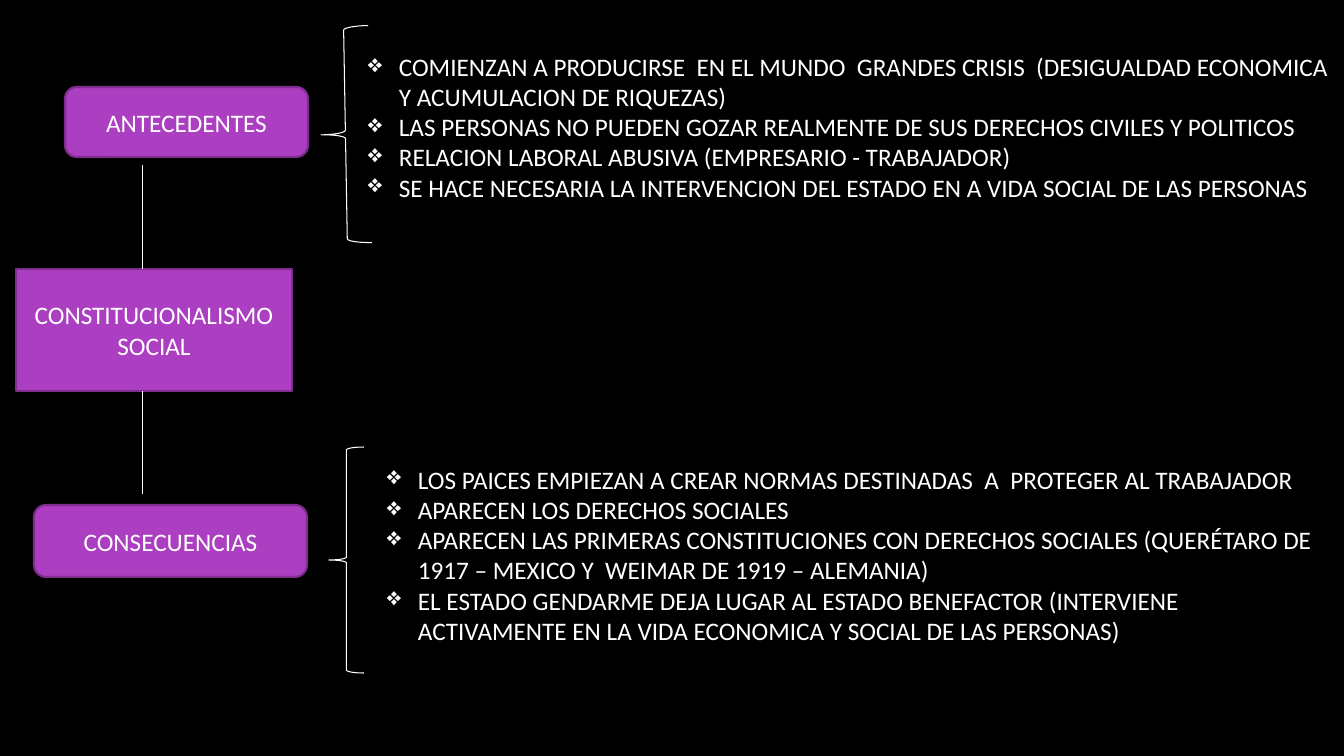
from dataclasses import dataclass

from lxml.etree import SubElement
from pptx import Presentation
from pptx.dml.color import RGBColor
from pptx.enum.shapes import MSO_CONNECTOR as Connector, MSO_SHAPE as Shape
from pptx.enum.text import MSO_ANCHOR as Anchor, PP_ALIGN as Align
from pptx.oxml.ns import qn
from pptx.util import Emu, Pt


@dataclass(frozen=True)
class Theme:
    """Colours, font and sizes of the deck."""
    background: RGBColor = RGBColor(0x00, 0x00, 0x00)
    ink: RGBColor = RGBColor(0xFF, 0xFF, 0xFF)
    node: RGBColor = RGBColor(0xAC, 0x3E, 0xC1)
    border: RGBColor = RGBColor(0x7F, 0x2E, 0x8F)
    font: str = "Calibri"
    size: Pt = Pt(18)
    thin: Pt = Pt(0.75)
    thick: Pt = Pt(1.5)


THEME = Theme()
PAGE = (1344, 756)
HANGING = 31

CAUSES = [
    "COMIENZAN A PRODUCIRSE  EN EL MUNDO  GRANDES CRISIS  (DESIGUALDAD ECONOMICA Y ACUMULACION DE RIQUEZAS)",
    "LAS PERSONAS NO PUEDEN GOZAR REALMENTE DE SUS DERECHOS CIVILES Y POLITICOS",
    "RELACION LABORAL ABUSIVA (EMPRESARIO - TRABAJADOR)",
    "SE HACE NECESARIA LA INTERVENCION DEL ESTADO EN A VIDA SOCIAL DE LAS PERSONAS",
]
EFFECTS = [
    "LOS PAICES EMPIEZAN A CREAR NORMAS DESTINADAS  A  PROTEGER AL TRABAJADOR",
    "APARECEN LOS DERECHOS SOCIALES",
    "APARECEN LAS PRIMERAS CONSTITUCIONES CON DERECHOS SOCIALES (QUERÉTARO DE 1917 – MEXICO Y  WEIMAR DE 1919 – ALEMANIA)",
    "EL ESTADO GENDARME DEJA LUGAR AL ESTADO BENEFACTOR (INTERVIENE ACTIVAMENTE EN LA VIDA ECONOMICA Y SOCIAL DE LAS PERSONAS)",
]


def px(length):
    """Turn pixels into EMU."""
    return Emu(round(length * 914400 / 100.8))


def place(box):
    """Turn a pixel box into EMU."""
    return [px(length) for length in box]


def write(frame, lines, align, bullet=None):
    """Fill a text frame with one paragraph per line."""
    frame.word_wrap = True
    for index, line in enumerate(lines):
        para = frame.add_paragraph() if index else frame.paragraphs[0]
        para.text = line
        para.alignment = align
        if bullet:
            properties = para._p.get_or_add_pPr()
            properties.set("marL", str(px(HANGING)))
            properties.set("indent", str(-px(HANGING)))
            SubElement(properties, qn("a:buChar"), char=bullet)
        para.font.name = THEME.font
        para.font.size = THEME.size
        para.font.color.rgb = THEME.ink


def add_node(slide, kind, box, lines):
    """Draw a purple box with centred text."""
    node = slide.shapes.add_shape(kind, *place(box))
    node.shadow.inherit = False
    node.fill.solid()
    node.fill.fore_color.rgb = THEME.node
    node.line.color.rgb = THEME.border
    node.line.width = THEME.thick
    node.text_frame.vertical_anchor = Anchor.MIDDLE
    write(node.text_frame, lines, Align.CENTER)


def add_brace(slide, box, rotation):
    """Draw a white brace that opens to the right."""
    brace = slide.shapes.add_shape(Shape.LEFT_BRACE, *place(box))
    brace.shadow.inherit = False
    brace.fill.background()
    brace.line.color.rgb = THEME.ink
    brace.line.width = THEME.thin
    brace.rotation = rotation


def add_branch(slide, box, label, node, brace, notes, items, rotation=0):
    """Draw a labelled box, its brace and its list, offset from the branch box."""
    left, top = box[:2]

    def inside(part):
        return left + part[0], top + part[1], part[2], part[3]

    add_brace(slide, inside(brace), rotation)
    add_node(slide, Shape.ROUNDED_RECTANGLE, inside(node), [label])
    text = slide.shapes.add_textbox(*place(inside(notes)))
    write(text.text_frame, items, Align.LEFT, "❖")


def add_trunk(slide, box, reach_up, reach_down):
    """Draw the central box and the lines that leave it up and down."""
    left, top, width, height = box
    add_node(slide, Shape.RECTANGLE, box, ["CONSTITUCIONALISMO", "SOCIAL"])
    stem = px(left + 127)
    bottom = top + height
    for start, end in ((top - reach_up, top), (bottom, bottom + reach_down)):
        line = slide.shapes.add_connector(Connector.STRAIGHT, stem, px(start), stem, px(end))
        line.line.color.rgb = THEME.ink
        line.line.width = THEME.thin
        SubElement(line._element.spPr, qn("a:effectLst"))


def main():
    """Build and save the deck."""
    deck = Presentation()
    deck.slide_width, deck.slide_height = place(PAGE)
    slide = deck.slides.add_slide(deck.slide_layouts[6])
    slide.background.fill.solid()
    slide.background.fill.fore_color.rgb = THEME.background
    add_branch(slide, (64, 26, 1280, 217), "ANTECEDENTES", node=(1, 61, 243, 70),
               brace=(257, 0, 49, 217), notes=(294, 20, 986, 166), items=CAUSES, rotation=359)
    add_trunk(slide, (16, 269, 276, 122), reach_up=104, reach_down=103)
    add_branch(slide, (34, 447, 1296, 226), "CONSECUENCIAS", node=(0, 58, 273, 72),
               brace=(295, 0, 35, 226), notes=(343, 12, 957, 194), items=EFFECTS)
    deck.save("out.pptx")


if __name__ == "__main__":
    main()
